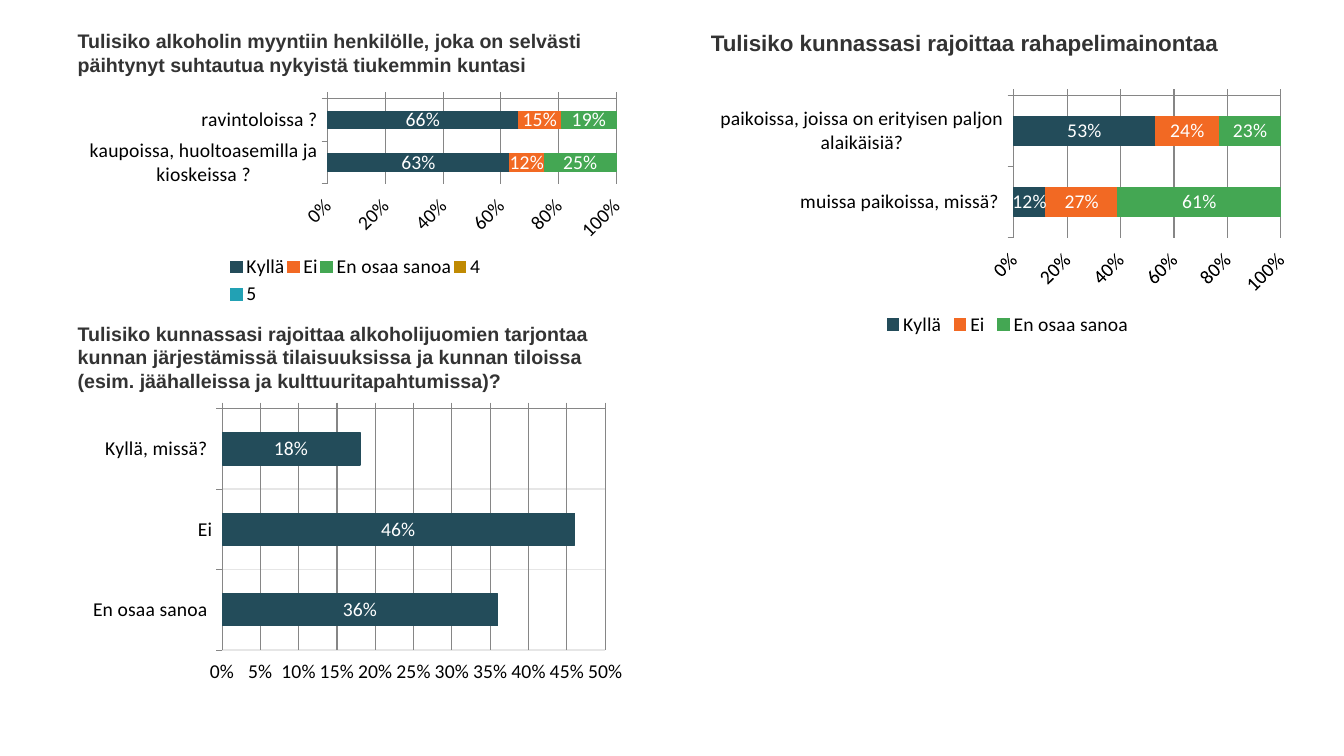
import dataclasses
import typing

import lxml.etree
import pptx
import pptx.chart.data
import pptx.dml.color
import pptx.enum.chart
import pptx.oxml.ns
import pptx.util

Inches = pptx.util.Inches
Pt = pptx.util.Pt
Frame = typing.Tuple[float, float, float, float]
COLORS = {
    "heading": "333333", "text": "000000", "label": "FFFFFF",
    "axis": "868686", "divider": "E6E6E6",
    "navy": "234C5A", "orange": "F26923", "green": "44A753",
    "ochre": "C08A02", "teal": "22A1B4",
}
SERIES_COLORS = ["navy", "orange", "green", "ochre", "teal"]


@dataclasses.dataclass
class Heading:
    text: str
    frame: Frame
    size: int = 14


@dataclasses.dataclass
class BarChart:
    frame: Frame
    plot: Frame
    categories: typing.List[str]
    series: typing.Dict[str, typing.List[float]]
    stacked: bool = True
    maximum: float = 1
    step: float = 0.2
    legend: typing.Optional[Frame] = None


HEADINGS = [
    Heading("Tulisiko alkoholin myyntiin henkilölle, joka on selvästi päihtynyt "
            "suhtautua nykyistä tiukemmin kuntasi", (0.77, 0.29, 5.51, 0.47)),
    Heading("Tulisiko kunnassasi rajoittaa alkoholijuomien tarjontaa kunnan "
            "järjestämissä tilaisuuksissa ja kunnan tiloissa (esim. jäähalleissa "
            "ja kulttuuritapahtumissa)?", (0.77, 3.19, 5.51, 0.71)),
    Heading("Tulisiko kunnassasi rajoittaa rahapelimainontaa",
            (7.05, 0.29, 5.77, 0.27), 16),
]
CHARTS = [
    BarChart((0.77, 0.91, 5.51, 2.18), (0.45, 0.03, 0.52, 0.39),
             ["ravintoloissa ?", "kaupoissa, huoltoasemilla ja kioskeissa ?"],
             {"Kyllä": [0.66, 0.63], "Ei": [0.15, 0.12],
              "En osaa sanoa": [0.19, 0.25], "4": [0, 0], "5": [0, 0]},
             legend=(0.27, 0.73, 0.46, 0.26)),
    BarChart((0.77, 3.99, 5.51, 2.86), (0.26, 0.02, 0.69, 0.84),
             ["Kyllä, missä? ", "Ei", "En osaa sanoa "],
             {"Series 1": [0.18, 0.46, 0.36]},
             stacked=False, maximum=0.5, step=0.05),
    BarChart((7.05, 0.88, 5.89, 2.5), (0.51, 0.02, 0.45, 0.57),
             ["paikoissa, joissa on erityisen paljon alaikäisiä?",
              "muissa paikoissa, missä? "],
             {"Kyllä": [0.53, 0.12], "Ei": [0.24, 0.27],
              "En osaa sanoa": [0.23, 0.61]}),
]


def rgb(name: str) -> pptx.dml.color.RGBColor:
    return pptx.dml.color.RGBColor.from_string(COLORS[name])


def style_line(line, color: str, width: float = 0.75) -> None:
    line.color.rgb = rgb(color)
    line.width = Pt(width)


def style_font(font, color: str) -> None:
    font.size = Pt(14)
    font.name = "Calibri"
    font.color.rgb = rgb(color)


def set_layout(parent, frame: Frame, after: str, inner: bool = False) -> None:
    qn = pptx.oxml.ns.qn
    for old in parent.findall(qn("c:layout")):
        parent.remove(old)
    layout = lxml.etree.Element(qn("c:layout"))
    manual = lxml.etree.SubElement(layout, qn("c:manualLayout"))
    entries = [("layoutTarget", "inner")] if inner else []
    entries += [("xMode", "edge"), ("yMode", "edge")]
    entries += [(key, str(value)) for key, value in zip("xywh", frame)]
    for tag, value in entries:
        lxml.etree.SubElement(manual, qn("c:" + tag)).set("val", value)
    previous = parent.find(qn(after)) if after else None
    if previous is None:
        parent.insert(0, layout)
    else:
        previous.addnext(layout)


def add_heading(slide, heading: Heading) -> None:
    sp = slide.shapes.add_textbox(*map(Inches, heading.frame))
    tf = sp.text_frame
    tf.word_wrap = True
    tf.margin_left = tf.margin_right = tf.margin_top = tf.margin_bottom = 0
    r = tf.paragraphs[0].add_run()
    r.text = heading.text
    r.font.name = "Arial"
    r.font.size = Pt(heading.size)
    r.font.bold = True
    r.font.color.rgb = rgb("heading")


def style_axes(chart, info: BarChart) -> None:
    enums = pptx.enum.chart
    cat, val = chart.category_axis, chart.value_axis
    for axis in (cat, val):
        axis.major_tick_mark = enums.XL_TICK_MARK.OUTSIDE
        axis.minor_tick_mark = enums.XL_TICK_MARK.NONE
        style_line(axis.format.line, "axis")
        style_font(axis.tick_labels.font, "text")
    cat.reverse_order = True
    cat.tick_label_position = enums.XL_TICK_LABEL_POSITION.LOW
    cat.has_major_gridlines = not info.stacked
    if not info.stacked:
        style_line(cat.major_gridlines.format.line, "divider", 1)
    val.tick_label_position = enums.XL_TICK_LABEL_POSITION.HIGH
    val.minimum_scale = 0
    val.maximum_scale = info.maximum
    val.major_unit = info.step
    val.has_major_gridlines = True
    style_line(val.major_gridlines.format.line, "axis")
    val.tick_labels.number_format = "0%"
    val.tick_labels.number_format_is_linked = False
    body = val._element.find(".//" + pptx.oxml.ns.qn("a:bodyPr"))
    body.set("rot", "-2700000" if info.stacked else "0")


def add_bar_chart(slide, info: BarChart) -> None:
    enums = pptx.enum.chart
    data = pptx.chart.data.CategoryChartData(number_format="0%")
    data.categories = info.categories
    for name, values in info.series.items():
        data.add_series(name, values)
    kind = (enums.XL_CHART_TYPE.BAR_STACKED if info.stacked
            else enums.XL_CHART_TYPE.BAR_CLUSTERED)
    chart = slide.shapes.add_chart(kind, *map(Inches, info.frame), data).chart
    style_font(chart.font, "text")
    chart.has_title = False
    chart.has_legend = info.stacked
    if info.stacked:
        chart.legend.position = enums.XL_LEGEND_POSITION.BOTTOM
        chart.legend.include_in_layout = False
        style_font(chart.legend.font, "text")
        if info.legend:
            set_layout(chart.legend._element, info.legend, "c:legendPos")
    style_axes(chart, info)
    plot = chart.plots[0]
    plot.vary_by_categories = False
    plot.gap_width = 150
    if info.stacked:
        plot.overlap = 100
    for series, color in zip(plot.series, SERIES_COLORS):
        series.format.fill.solid()
        series.format.fill.fore_color.rgb = rgb(color)
        style_line(series.format.line, color)
        if any(series.values):
            labels = series.data_labels
            labels.show_value = True
            labels.number_format = "0%"
            labels.number_format_is_linked = False
            labels.position = enums.XL_LABEL_POSITION.CENTER
            style_font(labels.font, "label")
    area = chart._chartSpace.find(".//" + pptx.oxml.ns.qn("c:plotArea"))
    set_layout(area, info.plot, "", inner=True)


def main() -> None:
    prs = pptx.Presentation()
    prs.slide_width = Inches(13.33)
    prs.slide_height = Inches(7.5)
    slide = prs.slides.add_slide(prs.slide_layouts[6])
    for heading, info in zip(HEADINGS, CHARTS):
        add_heading(slide, heading)
        add_bar_chart(slide, info)
    prs.save("out.pptx")


if __name__ == "__main__":
    main()
